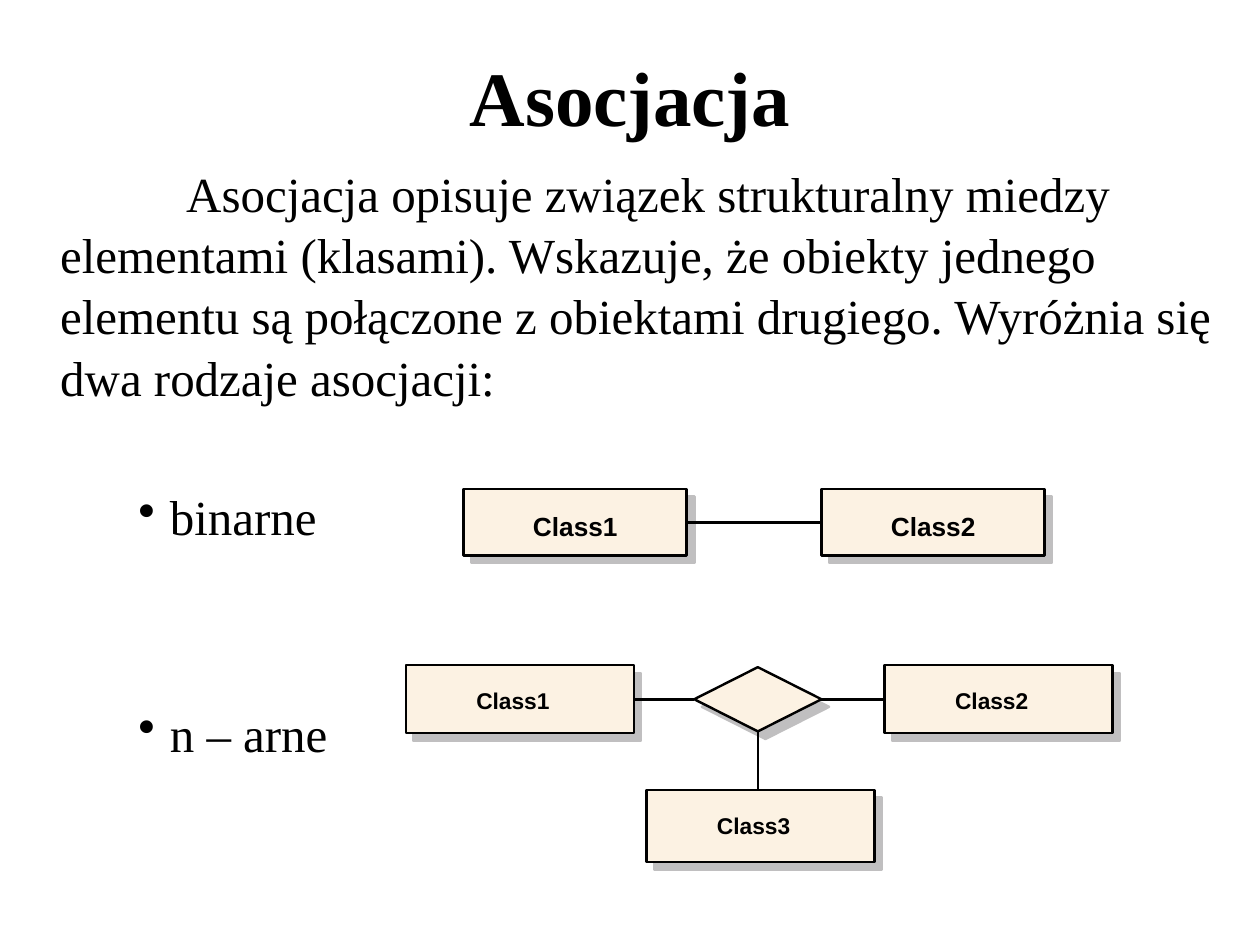
import dataclasses

import pptx
import pptx.dml.color
import pptx.enum.shapes
import pptx.enum.text
import pptx.oxml
import pptx.oxml.ns
import pptx.util

SHAPES = pptx.enum.shapes.MSO_SHAPE
TOP, LEFT, BOTTOM, RIGHT = range(4)
CELL = pptx.util.Inches(0.1)  # the slide is a grid of 100 columns and 75 rows


@dataclasses.dataclass(frozen=True)
class Theme:
    ink: str = "000000"
    face: str = "FCF2E3"
    shade: str = "C0BFC0"
    text_font: str = "Times New Roman"
    label_font: str = "Arial"
    title_size: float = 44
    body_size: float = 28
    binary_label_size: float = 15
    nary_label_size: float = 13
    binary_line: float = 1.5
    nary_line: float = 1.38
    shade_offset: float = 0.6


THEME = Theme()


def cells(*counts):
    return [round(count * CELL) for count in counts]


def color(value):
    return pptx.dml.color.RGBColor.from_string(value)


def format_runs(paragraph, font, size, bold=False):
    for run in paragraph.runs:
        run.font.name = font
        run.font.size = pptx.util.Pt(size)
        run.font.bold = bold
        run.font.color.rgb = color(THEME.ink)


def set_indent(paragraph, margin, first_line, bullet=False):
    properties = paragraph._p.get_or_add_pPr()
    properties.set("marL", str(pptx.util.Inches(margin)))
    properties.set("indent", str(pptx.util.Inches(first_line)))
    if bullet:
        mark = pptx.oxml.parse_xml(
            f'<a:buChar {pptx.oxml.ns.nsdecls("a")} char="•"/>')
        properties.append(mark)


def add_title(slide, text):
    shape = slide.shapes.add_textbox(*cells(7.5, 2.8, 85, 9.6))
    frame = shape.text_frame
    frame.word_wrap = True
    frame.vertical_anchor = pptx.enum.text.MSO_ANCHOR.MIDDLE
    frame.text = text
    paragraph = frame.paragraphs[0]
    paragraph.alignment = pptx.enum.text.PP_ALIGN.CENTER
    format_runs(paragraph, THEME.text_font, THEME.title_size, bold=True)


def add_body(slide, introduction, kinds):
    """Add the introduction and, below it, (text, space before) bullets."""
    frame = slide.shapes.add_textbox(*cells(0, 12.3, 100, 57.5)).text_frame
    frame.word_wrap = True
    for text, space in [(introduction, 5.6), *kinds]:
        is_bullet = text != introduction
        paragraph = frame.add_paragraph() if is_bullet else frame.paragraphs[0]
        paragraph.text = text
        paragraph.line_spacing = 1.04
        paragraph.space_before = pptx.util.Pt(space)
        if is_bullet:
            set_indent(paragraph, 1.25, -0.25, bullet=True)
        else:
            set_indent(paragraph, 0.38, 1)
        format_runs(paragraph, THEME.text_font, THEME.body_size)


def add_shaded(slide, preset, left, top, width, height, line_width):
    """Add a shape with a flat grey shade behind it; return the front shape."""
    layers = [(THEME.shade_offset, THEME.shade, THEME.shade),
              (0, THEME.face, THEME.ink)]
    for offset, fill, line in layers:
        shape = slide.shapes.add_shape(
            preset, *cells(left + offset, top + offset, width, height))
        shape.shadow.inherit = False
        shape.fill.solid()
        shape.fill.fore_color.rgb = color(fill)
        shape.line.color.rgb = color(line)
        shape.line.width = pptx.util.Pt(line_width)
    return shape


def add_label(slide, text, left, top, width, height, size):
    frame = slide.shapes.add_textbox(*cells(left, top, width, height)).text_frame
    frame.margin_left = frame.margin_right = 0
    frame.margin_top = frame.margin_bottom = 0
    frame.word_wrap = False
    frame.auto_size = pptx.enum.text.MSO_AUTO_SIZE.SHAPE_TO_FIT_TEXT
    frame.text = text
    format_runs(frame.paragraphs[0], THEME.label_font, size, bold=True)


def add_binary_class(slide, name, left):
    top = 38.8
    box = add_shaded(slide, SHAPES.RECTANGLE, left, top, 17.7, 5.3,
                     THEME.binary_line)
    add_label(slide, name, left + 5.5, top + 1.7, 6.9, 2.6,
              THEME.binary_label_size)
    return box


def add_nary_class(slide, name, left, top, height=5.4):
    box = add_shaded(slide, SHAPES.RECTANGLE, left, top, 18.1, height,
                     THEME.nary_line)
    add_label(slide, name, left + 5.6, top + 1.7, 7.8, 2.7,
              THEME.nary_label_size)
    return box


def add_line(slide, start, end, line_width):
    """Draw a line between two points; return it so its ends can be joined."""
    line = slide.shapes.add_connector(
        pptx.enum.shapes.MSO_CONNECTOR.STRAIGHT, *start, *end)
    line.line.color.rgb = color(THEME.ink)
    line.line.width = pptx.util.Pt(line_width)
    line._element.spPr.append(
        pptx.oxml.parse_xml(f'<a:effectLst {pptx.oxml.ns.nsdecls("a")}/>'))
    return line


def join_sideways(slide, left_shape, right_shape, line_width):
    line = add_line(slide, (0, 0), (0, 0), line_width)
    line.begin_connect(left_shape, RIGHT)
    line.end_connect(right_shape, LEFT)


def add_binary_association(slide):
    first = add_binary_class(slide, "Class1", 36.8)
    second = add_binary_class(slide, "Class2", 65.2)
    join_sideways(slide, first, second, THEME.binary_line)


def add_nary_association(slide):
    first = add_nary_class(slide, "Class1", 32.2, 52.8)
    second = add_nary_class(slide, "Class2", 70.2, 52.8)
    third = add_nary_class(slide, "Class3", 51.3, 62.7, height=5.7)
    diamond = add_shaded(slide, SHAPES.DIAMOND, 55.1, 52.95, 10.1, 5.1,
                         THEME.nary_line)
    join_sideways(slide, first, diamond, THEME.nary_line)
    join_sideways(slide, diamond, second, THEME.nary_line)
    middle = diamond.left + diamond.width // 2
    stem = add_line(slide, (middle, third.top),
                    (middle, diamond.top + diamond.height), THEME.nary_line)
    stem.end_connect(diamond, BOTTOM)


def main():
    presentation = pptx.Presentation()
    presentation.slide_width, presentation.slide_height = cells(100, 75)
    slide = presentation.slides.add_slide(presentation.slide_layouts[6])
    add_title(slide, "Asocjacja")
    add_body(
        slide,
        "Asocjacja opisuje związek strukturalny miedzy elementami (klasami). "
        "Wskazuje, że obiekty jednego elementu są połączone z obiektami "
        "drugiego. Wyróżnia się dwa rodzaje asocjacji:",
        [("binarne", 45), ("n – arne", 89)])
    add_nary_association(slide)
    add_binary_association(slide)
    presentation.save("out.pptx")


if __name__ == "__main__":
    main()
